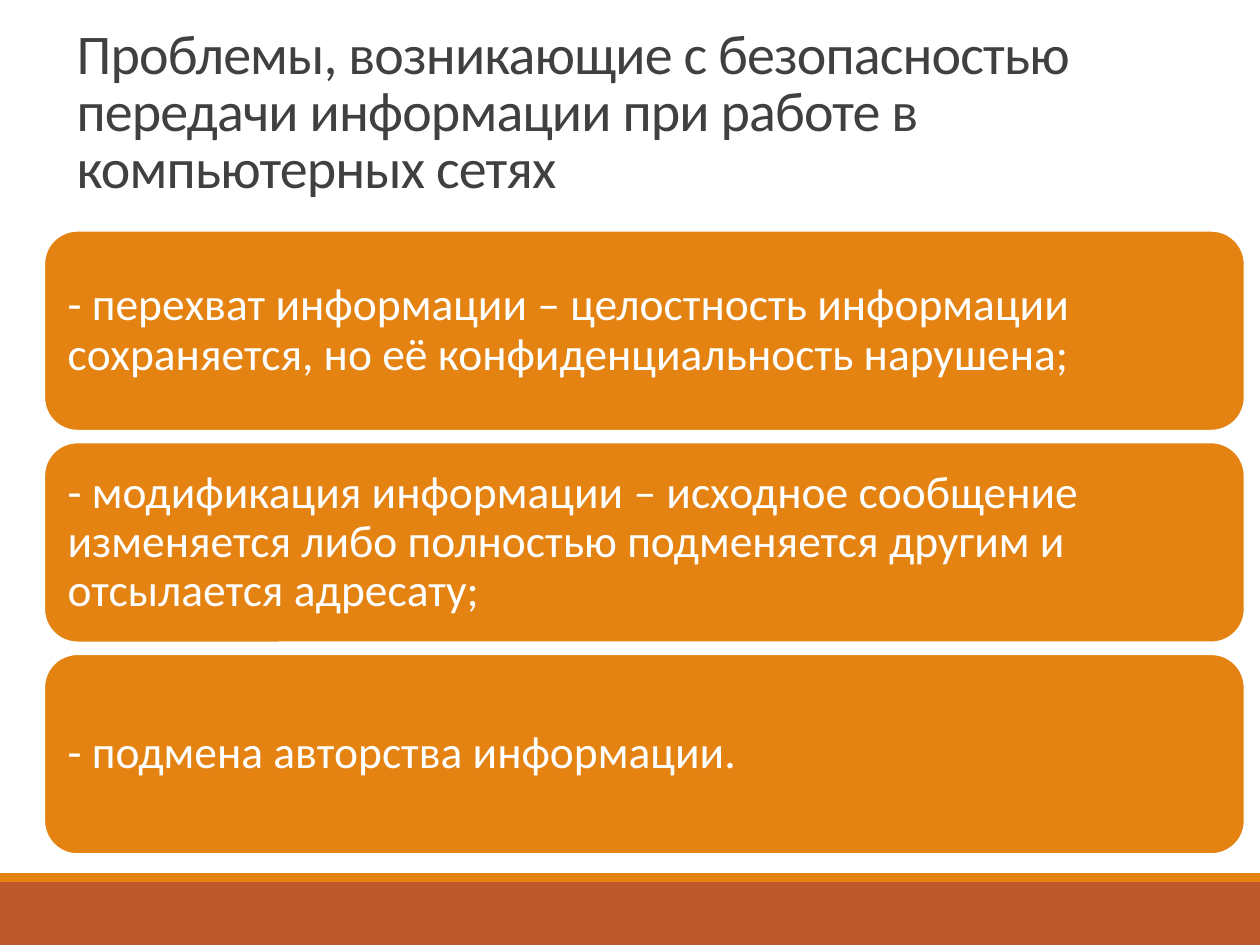
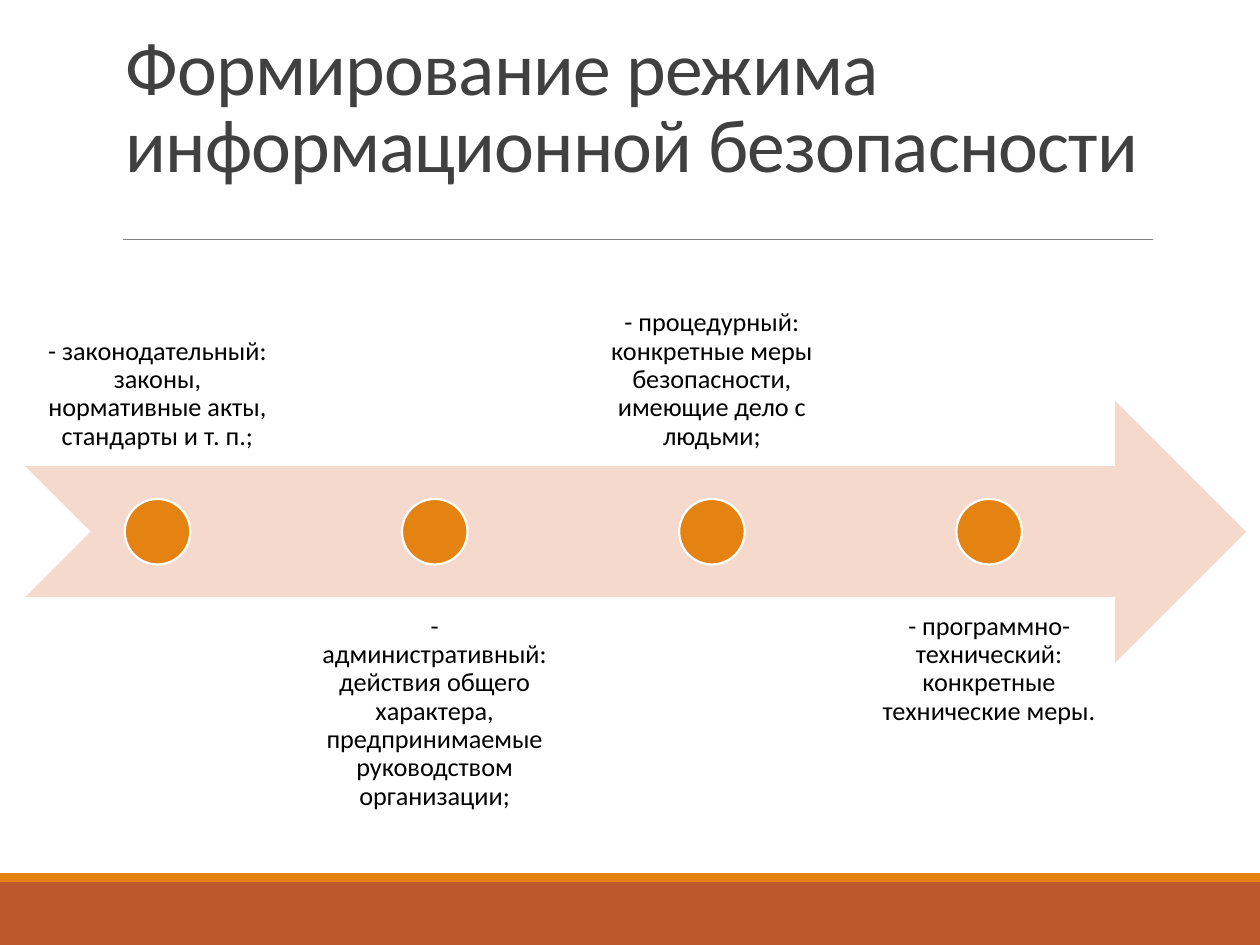
import pptx
import pptx.dml.color
import pptx.enum.shapes
import pptx.enum.text
import pptx.oxml
import pptx.oxml.ns
import pptx.util

Inches = pptx.util.Inches
Pt = pptx.util.Pt
SHAPE = pptx.enum.shapes.MSO_SHAPE
ANCHOR = pptx.enum.text.MSO_ANCHOR
ALIGN = pptx.enum.text.PP_ALIGN

ORANGE = "E48312"
RUST = "BD582C"
PEACH = "F5D9CC"
WHITE = "FFFFFF"
BLACK = "000000"
TITLE_GREY = "404040"
RULE_GREY = "808080"

PROBLEMS = [
    "- перехват информации – целостность информации сохраняется, "
    "но её конфиденциальность нарушена;",
    "- модификация информации – исходное сообщение изменяется "
    "либо полностью подменяется другим и отсылается адресату;",
    "- подмена авторства информации.",
]
LEVELS = [
    "- законодательный: законы, нормативные акты, стандарты и т. п.;",
    "- административный: действия общего характера, "
    "предпринимаемые руководством организации;",
    "- процедурный: конкретные меры безопасности, имеющие дело с людьми;",
    "- программно-технический: конкретные технические меры.",
]


def color(hex_code):
    return pptx.dml.color.RGBColor.from_string(hex_code)


def apply(target, formats):
    for name, value in formats.items():
        setattr(target, name, value)


class Deck:
    """Holds the shared style and the slide being drawn."""

    font = "Calibri"

    def __init__(self):
        self.presentation = pptx.Presentation()
        apply(self.presentation, {"slide_width": Inches(10), "slide_height": Inches(7.5)})
        self.slide = None

    def new_slide(self):
        """Start a blank slide with the bands at its foot."""
        self.slide = self.presentation.slides.add_slide(self.presentation.slide_layouts[6])
        self.shape(SHAPE.RECTANGLE, 0, 7, 10, 0.5, RUST)
        self.shape(SHAPE.RECTANGLE, 0, 6.93, 10, 0.07, ORANGE)

    def shape(self, kind, left, top, width, height, fill, outline=None):
        shape = self.slide.shapes.add_shape(
            kind, Inches(left), Inches(top), Inches(width), Inches(height))
        shape.shadow.inherit = False
        shape.fill.solid()
        shape.fill.fore_color.rgb = color(fill)
        if outline:
            shape.line.color.rgb = color(outline)
            shape.line.width = Pt(1.25)
        else:
            shape.line.fill.background()
        return shape

    def fill_text(self, shape, text, size, ink, anchor, align=ALIGN.LEFT,
                  inset=0.1, inset_y=None, spacing=0.9, tracking=None):
        """Give a shape one paragraph; tracking is in hundredths of a point."""
        across = Inches(inset)
        down = across if inset_y is None else Inches(inset_y)
        frame = shape.text_frame
        apply(frame, {"word_wrap": True, "vertical_anchor": anchor,
                      "margin_left": across, "margin_right": across,
                      "margin_top": down, "margin_bottom": down})
        paragraph = frame.paragraphs[0]
        apply(paragraph, {"alignment": align, "line_spacing": spacing})
        run = paragraph.add_run()
        run.text = text
        apply(run.font, {"name": self.font, "size": Pt(size)})
        run.font.color.rgb = color(ink)
        if tracking is not None:
            run._r.get_or_add_rPr().set("spc", str(tracking))

    def text(self, left, top, width, height, text, size, ink, anchor, **layout):
        box = self.slide.shapes.add_textbox(
            Inches(left), Inches(top), Inches(width), Inches(height))
        self.fill_text(box, text, size, ink, anchor, **layout)

    def title(self, left, top, width, height, text, size):
        self.text(left, top, width, height, text, size, TITLE_GREY, ANCHOR.BOTTOM,
                  inset_y=0.05, spacing=0.85, tracking=-50)

    def rule(self, left, right, y):
        rule = self.slide.shapes.add_connector(
            pptx.enum.shapes.MSO_CONNECTOR.STRAIGHT,
            Inches(left), Inches(y), Inches(right), Inches(y))
        rule.line.color.rgb = color(RULE_GREY)
        rule.line.width = Pt(0.5)
        rule._element.spPr.append(
            pptx.oxml.parse_xml(f"<a:effectLst {pptx.oxml.ns.nsdecls('a')}/>"))


def problems_slide(deck):
    deck.new_slide()
    deck.title(0.51, 0.7, 8.5, 0.94,
               "Проблемы, возникающие с безопасностью передачи информации "
               "при работе в компьютерных сетях", 32)
    for row, problem in enumerate(PROBLEMS):
        card = deck.shape(SHAPE.ROUNDED_RECTANGLE, 0.35, 1.83 + 1.68 * row,
                          9.53, 1.59, ORANGE, WHITE)
        deck.fill_text(card, problem, 26, WHITE, ANCHOR.MIDDLE, inset=0.11)


def levels_slide(deck):
    deck.new_slide()
    deck.rule(0.98, 9.15, 1.9)
    deck.title(0.9, 0.31, 8.25, 1.23, "Формирование режима информационной безопасности", 43.2)
    deck.shape(SHAPE.NOTCHED_RIGHT_ARROW, 0.2, 3.18, 9.69, 2.08, PEACH)
    width, dot = 2.1, 0.52
    for column, level in enumerate(LEVELS):
        left = 0.2 + 2.2 * column
        # Labels alternate above and below the arrow.
        top, anchor = (4.74, ANCHOR.TOP) if column % 2 else (1.62, ANCHOR.BOTTOM)
        deck.text(left, top, width, 2.08, level, 15, BLACK, anchor,
                  align=ALIGN.CENTER, inset=0.12)
        deck.shape(SHAPE.OVAL, left + (width - dot) / 2, 3.96, dot, dot, ORANGE, WHITE)


def main():
    deck = Deck()
    problems_slide(deck)
    levels_slide(deck)
    deck.presentation.save("out.pptx")


if __name__ == "__main__":
    main()
